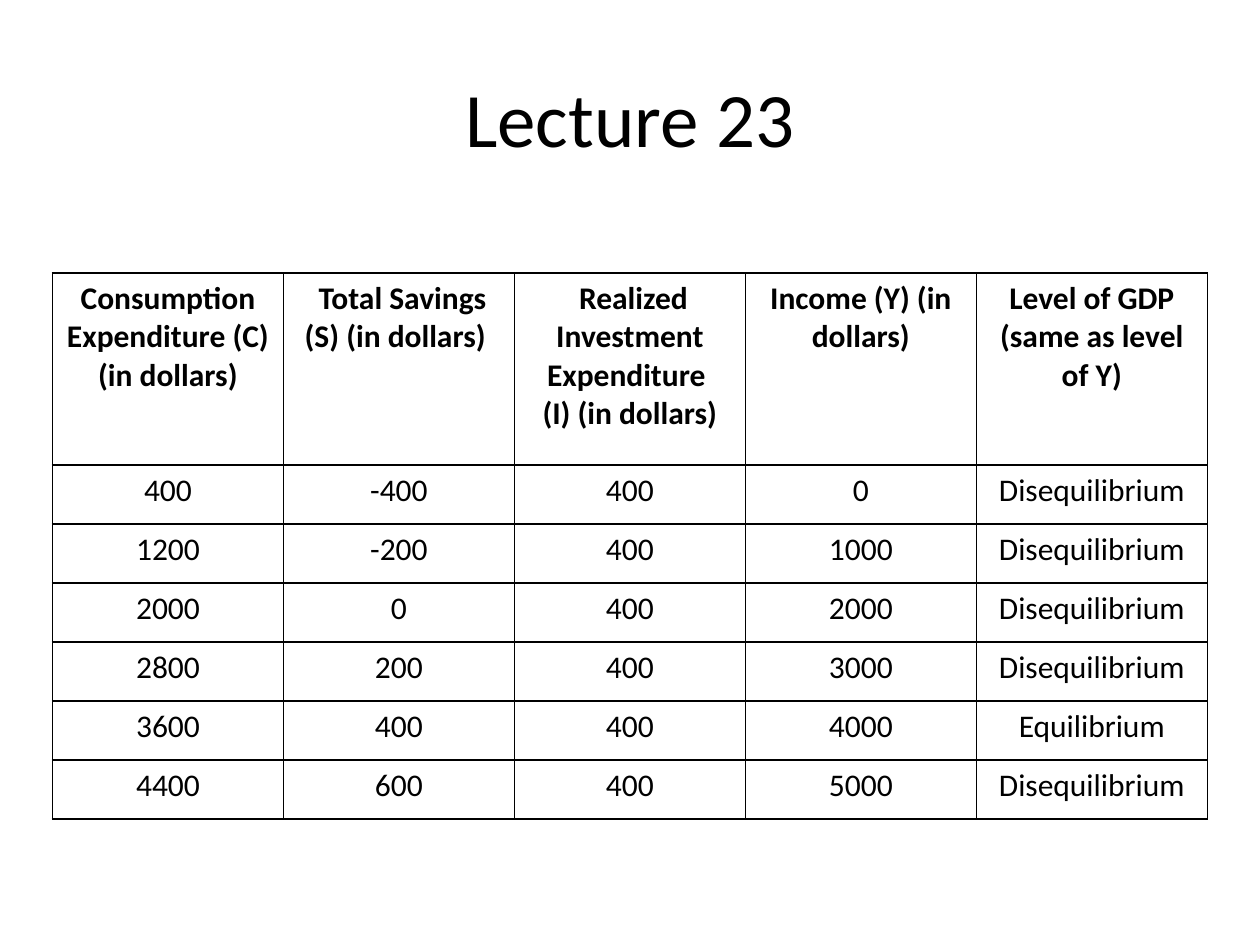
from pptx import Presentation
from pptx import util as u
from pptx.dml.color import RGBColor
from pptx.enum import text
from pptx.oxml import parse_xml
from pptx.oxml.ns import nsdecls

TITLE = "Lecture 23"
HEADERS = [
    ["Consumption Expenditure (C) (in dollars)"],
    [" Total Savings (S) (in dollars) "],
    [" Realized Investment Expenditure ", "(I) (in dollars)"],
    ["Income (Y) (in dollars)"],
    ["Level of GDP (same as level of Y)"],
]
ROWS = [
    ("400", "-400", "400", "0", "Disequilibrium"),
    ("1200", "-200", "400", "1000", "Disequilibrium"),
    ("2000", "0", "400", "2000", "Disequilibrium"),
    ("2800", "200", "400", "3000", "Disequilibrium"),
    ("3600", "400", "400", "4000", "Equilibrium"),
    ("4400", "600", "400", "5000", "Disequilibrium"),
]
COLORS = {"ink": "000000"}
FONT = "Calibri"
LEFT, TOP, COL_W = 30, 156, 132
HEADER_H, ROW_H = 109.75, 33.75


def write(tf, lines, size, bold=False):
    for i, line in enumerate(lines):
        p = tf.add_paragraph() if i else tf.paragraphs[0]
        p.alignment = text.PP_ALIGN.CENTER
        r = p.add_run()
        r.text = line
        r.font.name = FONT
        r.font.size = u.Pt(size)
        r.font.bold = bold
        r.font.color.rgb = RGBColor.from_string(COLORS["ink"])


def add_borders(cell, width=1):
    tcPr = cell._tc.get_or_add_tcPr()
    for i, side in enumerate(("lnL", "lnR", "lnT", "lnB")):
        tcPr.insert(i, parse_xml(
            f'<a:{side} {nsdecls("a")} w="{u.Pt(width)}"><a:solidFill>'
            f'<a:srgbClr val="{COLORS["ink"]}"/></a:solidFill></a:{side}>'))


def main():
    prs = Presentation()
    prs.slide_width, prs.slide_height = u.Pt(720), u.Pt(540)
    s = prs.slides.add_slide(prs.slide_layouts[6])

    title = s.shapes.add_textbox(u.Pt(36), u.Pt(21.6), u.Pt(648), u.Pt(90))
    tf = title.text_frame
    tf.word_wrap = True
    tf.vertical_anchor = text.MSO_ANCHOR.MIDDLE
    write(tf, [TITLE], 44)

    cells = [HEADERS] + [[[value] for value in row] for row in ROWS]
    heights = [HEADER_H] + [ROW_H] * len(ROWS)
    n = len(HEADERS)
    table = s.shapes.add_table(len(cells), n, u.Pt(LEFT), u.Pt(TOP),
                               u.Pt(COL_W * n), u.Pt(sum(heights))).table
    table.first_row = table.horz_banding = False
    for col in table.columns:
        col.width = u.Pt(COL_W)
    for i, (row, height) in enumerate(zip(cells, heights)):
        table.rows[i].height = u.Pt(height)
        for j, lines in enumerate(row):
            cell = table.cell(i, j)
            cell.fill.background()
            add_borders(cell)
            write(cell.text_frame, lines, 18, bold=i == 0)

    prs.save("out.pptx")


if __name__ == "__main__":
    main()
